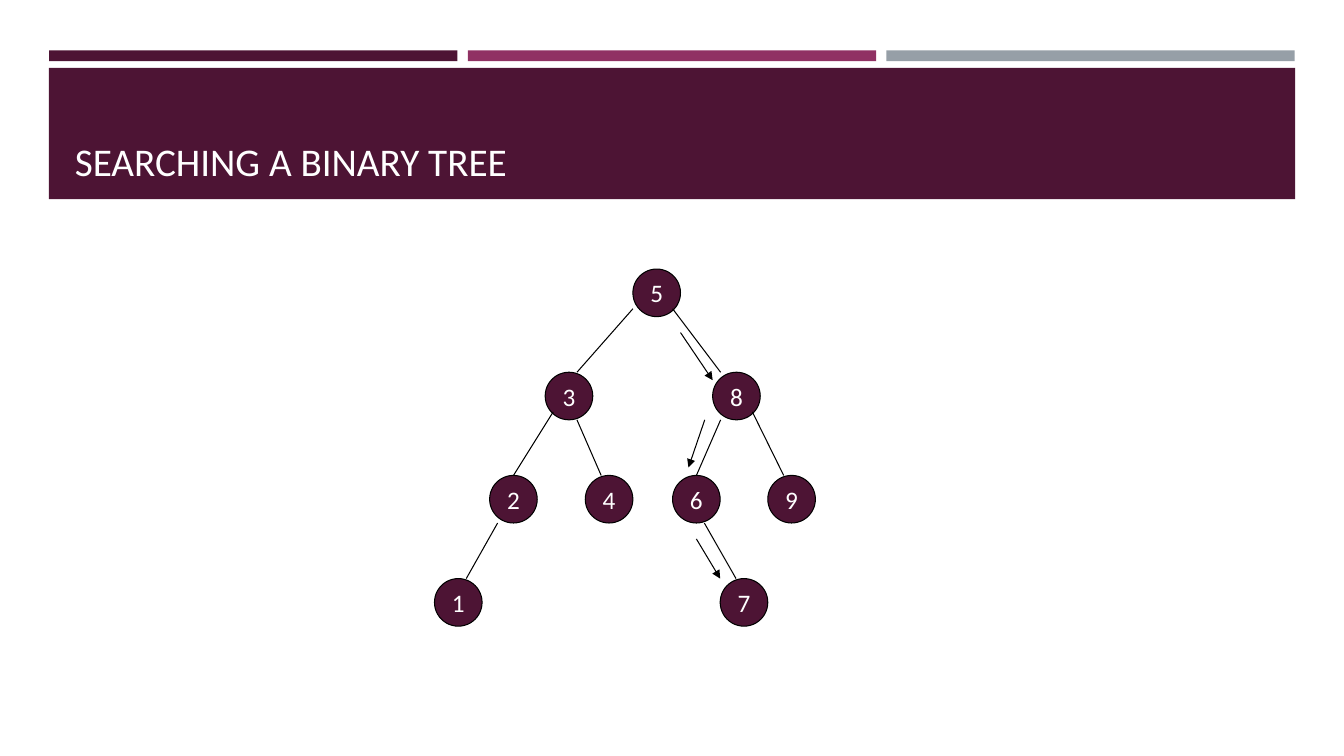
from dataclasses import dataclass

from lxml.etree import SubElement
from pptx import Presentation
from pptx.dml.color import RGBColor
from pptx.enum.shapes import MSO_CONNECTOR as Connector, MSO_SHAPE as Preset
from pptx.enum.text import MSO_ANCHOR as Anchor, PP_ALIGN as Align
from pptx.oxml.ns import qn
from pptx.util import Cm, Pt


@dataclass(frozen=True)
class Theme:
    plum: RGBColor = RGBColor.from_string("4D1434")
    magenta: RGBColor = RGBColor.from_string("903163")
    gray: RGBColor = RGBColor.from_string("969FA7")
    white: RGBColor = RGBColor.from_string("FFFFFF")
    black: RGBColor = RGBColor.from_string("000000")
    font: str = "Calibri"
    title_size: Pt = Pt(28)
    node_size: Pt = Pt(18)
    line_width: Pt = Pt(0.75)


theme = Theme()


def write_text(shape, text, *, size, align, anchor, wrap):
    frame = shape.text_frame
    frame.word_wrap = wrap
    frame.vertical_anchor = anchor
    paragraph = frame.paragraphs[0]
    paragraph.alignment = align
    run = paragraph.add_run()
    run.text = text
    run.font.name = theme.font
    run.font.size = size
    run.font.color.rgb = theme.white


def add_filled(preset, left, top, width, height, color):
    shape = slide.shapes.add_shape(preset, Cm(left), Cm(top), Cm(width), Cm(height))
    shape.shadow.inherit = False
    shape.fill.solid()
    shape.fill.fore_color.rgb = color
    shape.line.fill.background()
    return shape


presentation = Presentation()
presentation.slide_width = Cm(33.87)
presentation.slide_height = Cm(19.05)
slide = presentation.slides.add_slide(presentation.slide_layouts[5])

for column, color in enumerate([theme.plum, theme.magenta, theme.gray]):
    add_filled(Preset.RECTANGLE, 1.24 + column * 10.55, 1.27, 10.29, 0.27, color)
add_filled(Preset.RECTANGLE, 1.23, 1.71, 31.41, 3.31, theme.plum)

title = slide.shapes.title
title.left, title.top, title.width, title.height = Cm(1.63), Cm(1.96), Cm(30.63), Cm(2.82)
write_text(title, "SEARCHING A BINARY TREE", size=theme.title_size,
           align=Align.LEFT, anchor=Anchor.BOTTOM, wrap=True)
slide.shapes._spTree.append(title._element)

node_diameter = 1.2
first_level_top = 6.78
level_pitch = 2.6
levels = [
    {"5": 15.95},
    {"3": 13.74, "8": 17.96},
    {"6": 16.95, "4": 14.75, "2": 12.34, "9": 19.35},
    {"1": 10.95, "7": 18.15},
]
node_corners = {}
for depth, level in enumerate(levels):
    top = first_level_top + depth * level_pitch
    for key, left in level.items():
        node_corners[key] = left, top
        node = add_filled(Preset.OVAL, left, top, node_diameter, node_diameter, theme.plum)
        node.line.color.rgb = theme.black
        node.line.width = theme.line_width
        write_text(node, key, size=theme.node_size,
                   align=Align.CENTER, anchor=Anchor.MIDDLE, wrap=False)

# parent, offset from its corner, child, offset from its corner, arrowhead
links = [
    ("5", (0, 1), "3", (0.8, 0), False),
    ("3", (0.2, 1), "2", (0.6, 0), False),
    ("3", (0.8, 1.2), "4", (0.4, 0), False),
    ("2", (0.2, 1.2), "1", (0.8, 0), False),
    ("5", (1, 1), "8", (0.2, 0), False),
    ("8", (0.2, 1.2), "6", (0.6, 0), False),
    ("8", (1, 1), "9", (0.4, 0), False),
    ("6", (0.8, 1.2), "7", (0.4, 0), False),
    ("5", (1.2, 1.6), "8", (0, 0.2), True),
    ("8", (-0.2, 1.2), "6", (0.4, -0.2), True),
    ("6", (0.6, 1.6), "7", (0, 0), True),
]
for parent, start, child, end, is_search_step in links:
    start_x, start_y = (Cm(a + b) for a, b in zip(node_corners[parent], start))
    end_x, end_y = (Cm(a + b) for a, b in zip(node_corners[child], end))
    connector = slide.shapes.add_connector(Connector.STRAIGHT, start_x, start_y, end_x, end_y)
    connector.line.color.rgb = theme.black
    connector.line.width = theme.line_width
    if is_search_step:
        SubElement(connector.line._get_or_add_ln(), qn("a:tailEnd"), type="triangle")
    SubElement(connector._element.spPr, qn("a:effectLst"))

presentation.save("out.pptx")
